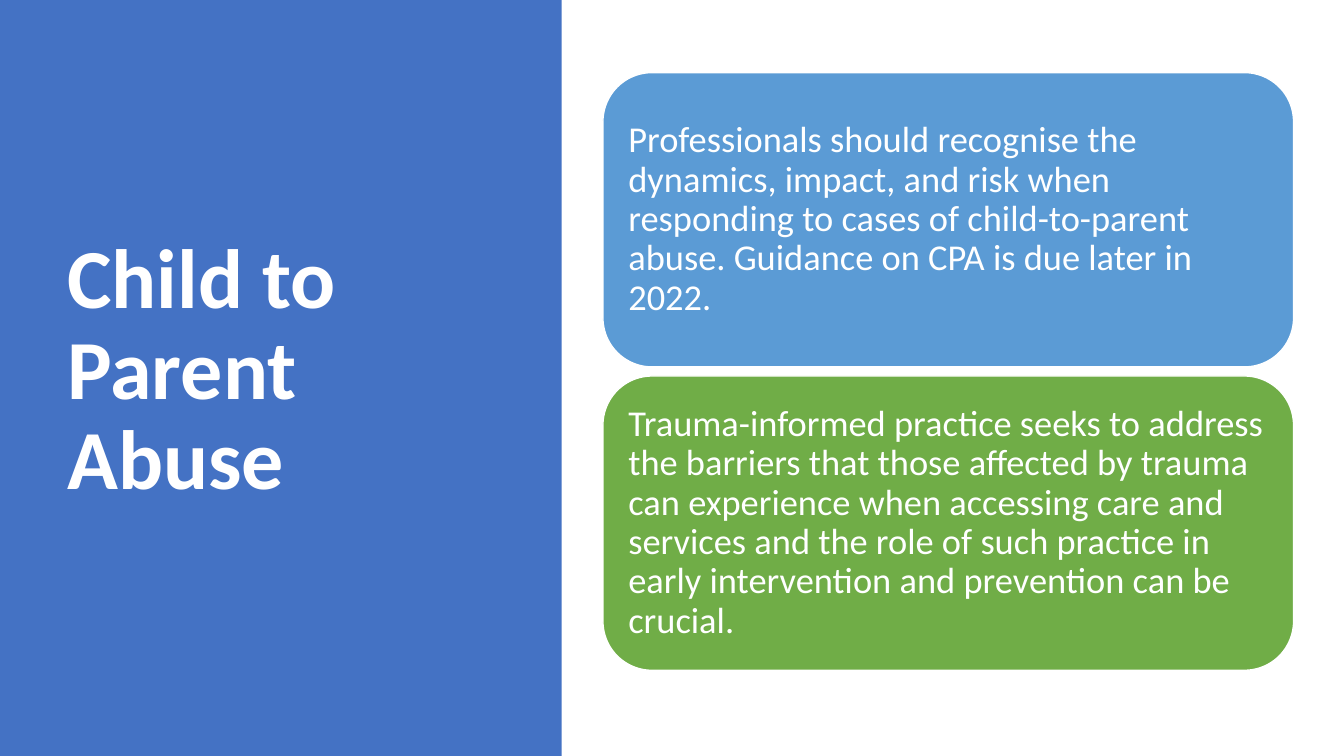
from pptx import Presentation
from pptx.dml.color import RGBColor
from pptx.enum import shapes, text
from pptx.util import Emu, Pt

PX = 9144
FONT = "Calibri"
COLORS = {"panel": "4472C4", "blue": "5B9BD5", "green": "70AD47", "white": "FFFFFF"}
CARDS = [
    ("blue", "Professionals should recognise the dynamics, impact, and risk when "
             "responding to cases of child-to-parent abuse. Guidance on CPA is due "
             "later in 2022."),
    ("green", "Trauma-informed practice seeks to address the barriers that those "
              "affected by trauma can experience when accessing care and services "
              "and the role of such practice in early intervention and prevention "
              "can be crucial."),
]


def px(*nums):
    return [Emu(n * PX) for n in nums]


def color(name):
    return RGBColor.from_string(COLORS[name])


def add_block(slide, kind, box, fill):
    block = slide.shapes.add_shape(kind, *px(*box))
    block.shadow.inherit = False
    block.fill.solid()
    block.fill.fore_color.rgb = color(fill)
    block.line.fill.background()
    return block


def write(shape, words, size, inset, bold=False):
    frame = shape.text_frame
    frame.word_wrap = True
    frame.vertical_anchor = text.MSO_ANCHOR.MIDDLE
    frame.margin_left, frame.margin_top, frame.margin_right, frame.margin_bottom = px(*inset)
    para = frame.paragraphs[0]
    para.text = words
    para.alignment = text.PP_ALIGN.LEFT
    para.line_spacing = 0.9
    para.font.name = FONT
    para.font.size = Pt(size)
    para.font.bold = bold
    para.font.color.rgb = color("white")


def add_title(slide, words, box):
    write(slide.shapes.add_textbox(*px(*box)), words, 60, (10, 5, 10, 5), True)


def add_card(slide, words, box, fill):
    card = add_block(slide, shapes.MSO_SHAPE.ROUNDED_RECTANGLE, box, fill)
    card.line.color.rgb = color("white")
    card.line.width = Pt(1)
    write(card, words, 26, (11, 11, 11, 11))


def main():
    deck = Presentation()
    deck.slide_width, deck.slide_height = px(1333, 750)
    slide = deck.slides.add_slide(deck.slide_layouts[6])
    add_block(slide, shapes.MSO_SHAPE.RECTANGLE, (0, 0, 557, 750), "panel")
    add_title(slide, "Child to Parent Abuse", (57, 68, 416, 602))
    for row, (fill, words) in enumerate(CARDS):
        add_card(slide, words, (598, 72 + row * 301, 685, 292), fill)
    deck.save("out.pptx")


if __name__ == "__main__":
    main()
